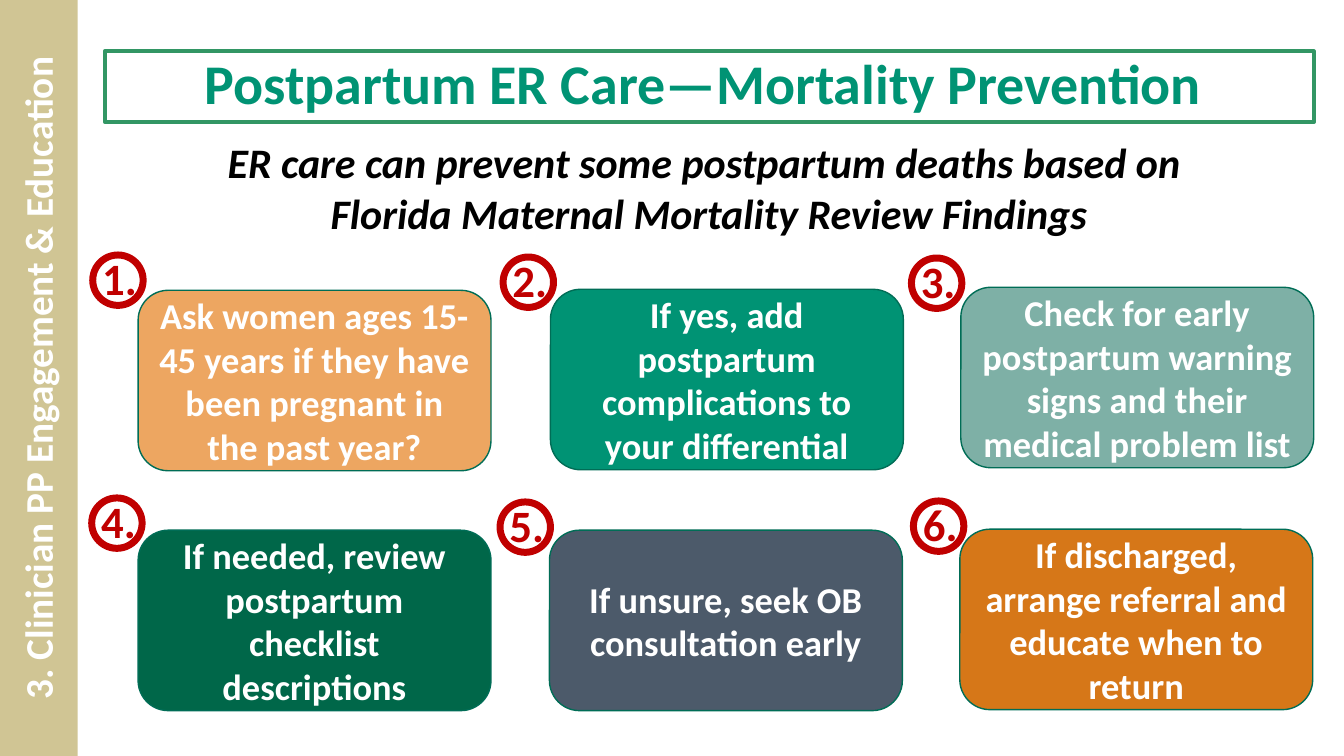
import pptx
import pptx.dml.color
import pptx.enum.shapes
import pptx.enum.text
import pptx.util

Inches = pptx.util.Inches
Shapes = pptx.enum.shapes.MSO_SHAPE
Anchor = pptx.enum.text.MSO_ANCHOR

GREEN = "009374"
RED = "C00000"
WHITE = "FFFFFF"


def paint(target, color):
    """Apply a hex colour to a fill, or to the colour of a line or font."""
    if hasattr(target, "solid"):
        target.solid()
        target = target.fore_color
    elif hasattr(target, "color"):
        target = target.color
    target.rgb = pptx.dml.color.RGBColor.from_string(color)


def add_box(preset, place, fill=None, line=None, width=0, lines=(),
            size=26, color=WHITE, italic=False, anchor=Anchor.MIDDLE):
    """Add a preset shape, or a text box when preset is None, with centred bold text."""
    place = [Inches(length) for length in place]
    if preset is None:
        box = page.shapes.add_textbox(*place)
    else:
        box = page.shapes.add_shape(preset, *place)
        box.shadow.inherit = False
    if fill:
        paint(box.fill, fill)
    else:
        box.fill.background()
    if line:
        paint(box.line, line)
        box.line.width = pptx.util.Pt(width)
    else:
        box.line.fill.background()
    frame = box.text_frame
    frame.word_wrap = True
    frame.vertical_anchor = anchor
    for index, text in enumerate(lines):
        para = frame.add_paragraph() if index else frame.paragraphs[0]
        para.alignment = pptx.enum.text.PP_ALIGN.CENTER
        span = para.add_run()
        span.text = text
        span.font.name = "Calibri"
        span.font.size = pptx.util.Pt(size)
        span.font.bold = True
        span.font.italic = italic
        paint(span.font, color)
    return box


deck = pptx.Presentation()
deck.slide_width = Inches(13.33)
deck.slide_height = Inches(7.5)
page = deck.slides.add_slide(deck.slide_layouts[6])

title = add_box(Shapes.RECTANGLE, (1.04, 0.51, 11.99, 0.7), line="329664", width=3,
                lines=["Postpartum ER Care—Mortality Prevention "],
                size=40, color=GREEN, anchor=Anchor.BOTTOM)
title.text_frame.paragraphs[0].line_spacing = 0.9

add_box(None, (0.37, 1.31, 13.33, 1.11),
        lines=["ER care can prevent some postpartum deaths based on ",
               "Florida Maternal Mortality Review Findings"],
        size=30, color="000000", italic=True, anchor=Anchor.TOP)

# Card left and top, ring left and top, card fill, card text
steps = [
    (1.37, 2.88, 0.92, 2.53, "EDA661",
     "Ask women ages 15-45 years if they have been pregnant in the past year?"),
    (5.46, 2.87, 4.99, 2.55, GREEN,
     "If yes, add postpartum complications to your differential"),
    (9.53, 2.85, 9.04, 2.56, "7EB0A6",
     "Check for early postpartum warning signs and their medical problem list"),
    (1.37, 5.26, 0.91, 4.94, "006749",
     "If needed, review postpartum checklist descriptions"),
    (5.45, 5.26, 4.96, 4.98, "4C5A6A",
     "If unsure, seek OB consultation early"),
    (9.52, 5.25, 9.06, 4.97, "D67718",
     "If discharged, arrange referral and educate when to return"),
]
for number, (left, top, ring_left, ring_top, fill, text) in enumerate(steps, 1):
    add_box(Shapes.ROUNDED_RECTANGLE, (left, top, 3.5, 1.79), fill, "006D56", 1, [text])
    add_box(None, (ring_left - 0.04, ring_top - 0.09, 0.61, 0.64),
            lines=[f"{number}."], size=32, color=RED, anchor=Anchor.TOP)
    add_box(Shapes.OVAL, (ring_left, ring_top, 0.5, 0.5), line=RED, width=5)

sidebar = add_box(Shapes.RECTANGLE, (-3.38, 3.35, 7.5, 0.8), "D0C594",
                  lines=["3. Clinician PP Engagement & Education"], size=28)
sidebar.rotation = 270

deck.save("out.pptx")
